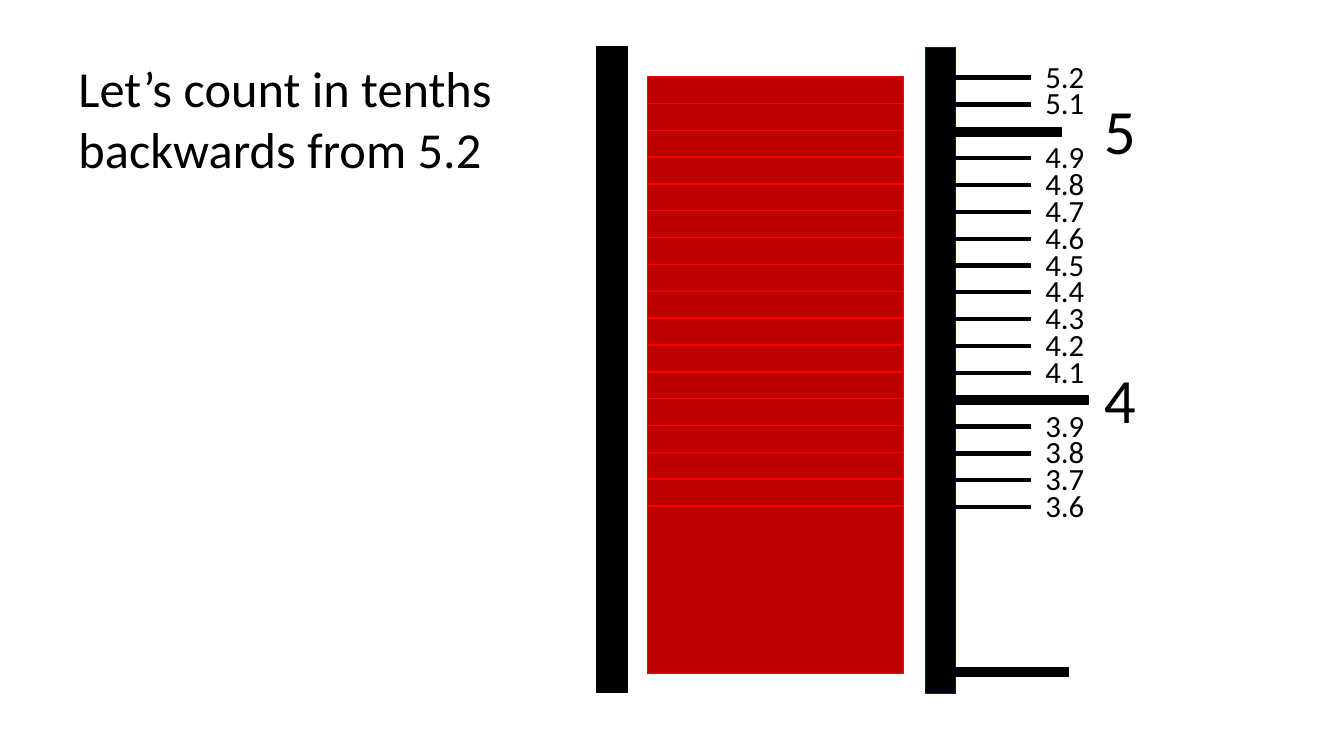
from lxml import etree
from pptx import Presentation
from pptx import util as u
from pptx.dml.color import RGBColor
from pptx.enum import shapes, text
from pptx.oxml import ns

BLACK, NAVY, DARK_RED, RED = "000000", "002060", "C00000", "FF0000"
FONT = "Calibri"
TOP, STEP = 0.76, 0.2663
TENTHS = 16
START = 52
STACK_LEFT, STACK_WIDTH = 6.42, 2.54
STACK_BOTTOM = 6.68
TICK_LEFT, TICK_RIGHT = 9.2, 10.23
WHOLE_BARS = {5: (9.48, 1.05), 4: (9.41, 1.38)}


def color(value):
    return RGBColor.from_string(value)


def row(step):
    return TOP + step * STEP


def block(slide, left, top, width, height, fill, edge):
    rect = slide.shapes.add_shape(
        shapes.MSO_SHAPE.RECTANGLE, *map(u.Inches, (left, top, width, height)))
    rect.shadow.inherit = False
    rect.fill.solid()
    rect.fill.fore_color.rgb = color(fill)
    rect.line.color.rgb = color(edge)
    rect.line.width = u.Pt(1)


def words(slide, left, top, width, height, content, size):
    box = slide.shapes.add_textbox(*map(u.Inches, (left, top, width, height)))
    frame = box.text_frame
    frame.word_wrap = True
    frame.auto_size = text.MSO_AUTO_SIZE.SHAPE_TO_FIT_TEXT
    run = frame.paragraphs[0].add_run()
    run.text = content
    run.font.name = FONT
    run.font.size = u.Pt(size)
    run.font.color.rgb = color(BLACK)


def tick(slide, y):
    mark = slide.shapes.add_connector(
        shapes.MSO_CONNECTOR.STRAIGHT,
        *map(u.Inches, (TICK_LEFT, y, TICK_RIGHT, y)))
    mark.line.color.rgb = color(BLACK)
    mark.line.width = u.Pt(3)
    etree.SubElement(mark._element.spPr, ns.qn("a:effectLst"))


def whole_mark(slide, number, y):
    left, width = WHOLE_BARS[number]
    block(slide, left, y - 0.03, width, 0.09, BLACK, BLACK)
    words(slide, 10.85, y - 0.43, 0.68, 0.86, str(number), 45)


def tenth_mark(slide, value, y):
    tick(slide, y + 0.01)
    words(slide, 10.27, y - 0.24, 0.74, 0.47, f"{value / 10:.1f}", 22)


def stack(slide):
    base = row(TENTHS)
    block(slide, STACK_LEFT, base, STACK_WIDTH, STACK_BOTTOM - base, DARK_RED, RED)
    for step in reversed(range(TENTHS)):
        block(slide, STACK_LEFT, row(step), STACK_WIDTH, STEP, DARK_RED, RED)


def scale(slide):
    block(slide, 5.92, 0.46, 0.3, 6.41, BLACK, BLACK)
    block(slide, 9.18, 0.47, 0.3, 6.41, BLACK, NAVY)
    block(slide, 9.4, 6.62, 1.2, 0.09, BLACK, BLACK)
    for step in range(TENTHS + 1):
        value = START - step
        if value % 10:
            tenth_mark(slide, value, row(step))
        else:
            whole_mark(slide, value // 10, row(step))


def main():
    deck = Presentation()
    deck.slide_width, deck.slide_height = u.Inches(13.33), u.Inches(7.5)
    slide = deck.slides.add_slide(deck.slide_layouts[6])
    stack(slide)
    scale(slide)
    words(slide, 0.68, 0.52, 4.44, 1.31,
          "Let’s count in tenths backwards from 5.2", 36)
    deck.save("out.pptx")


if __name__ == "__main__":
    main()
